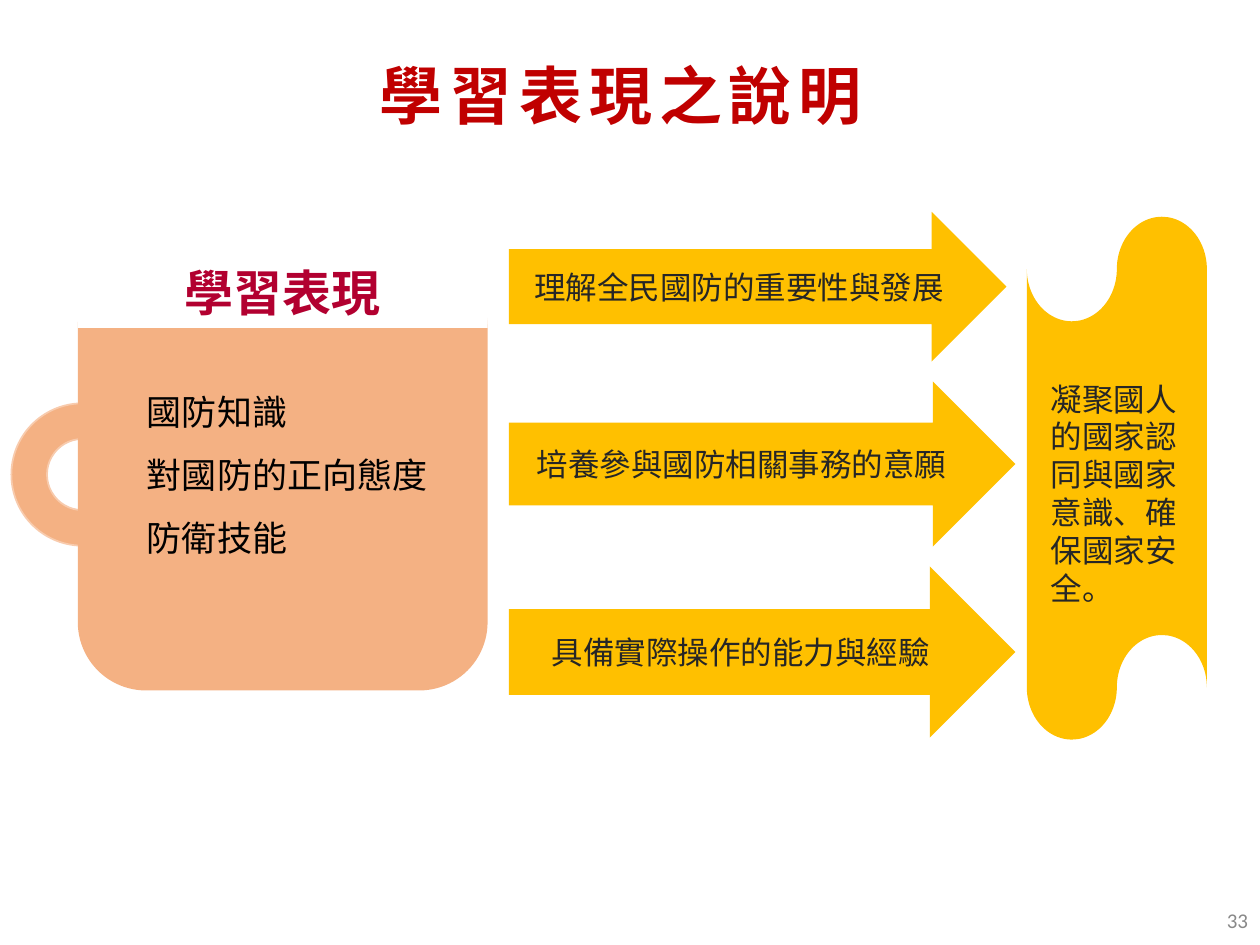
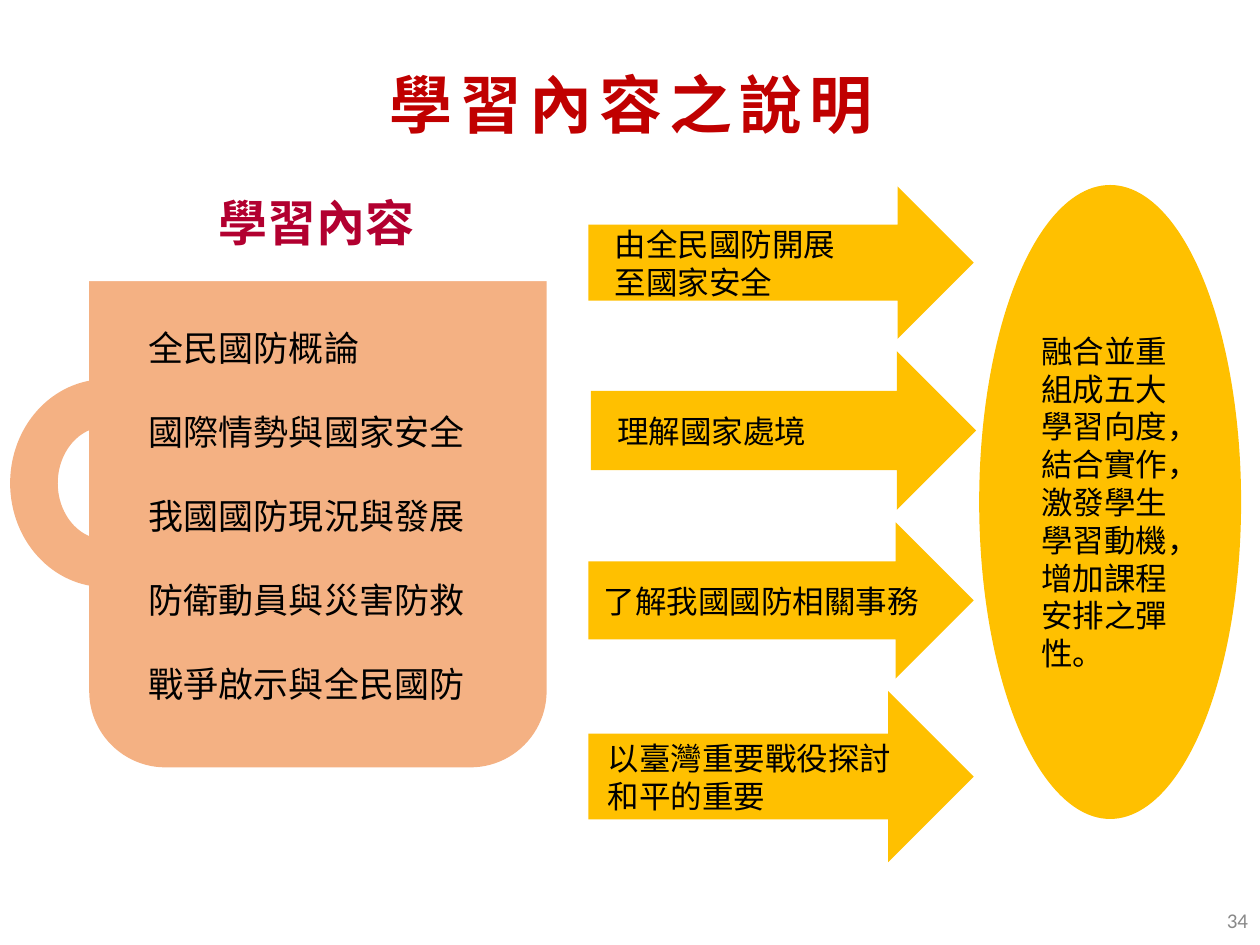
from pptx import Presentation
from pptx.dml.color import RGBColor
from pptx.enum.shapes import MSO_SHAPE
from pptx.enum.text import MSO_ANCHOR, PP_ALIGN
from pptx.oxml.ns import qn
from pptx.util import Cm, Pt

RIGHT_ARROW = MSO_SHAPE.RIGHT_ARROW
BLOCK_ARC = MSO_SHAPE.BLOCK_ARC
ROUNDED = MSO_SHAPE.ROUNDED_RECTANGLE
RECTANGLE = MSO_SHAPE.RECTANGLE
TAPE = MSO_SHAPE.WAVE if not hasattr(MSO_SHAPE, "FLOWCHART_PUNCHED_TAPE") else MSO_SHAPE.FLOWCHART_PUNCHED_TAPE
OVAL = MSO_SHAPE.OVAL
LEFT, CENTER, RIGHT = PP_ALIGN.LEFT, PP_ALIGN.CENTER, PP_ALIGN.RIGHT
TOP, MIDDLE = MSO_ANCHOR.TOP, MSO_ANCHOR.MIDDLE

CJK_FONT = "Noto Sans CJK SC"
NUMBER_FONT = "Calibri"
TITLE_RED = "C00000"
LABEL_RED = "B20030"
GOLD = "FFC000"
PEACH = "F4B183"
PALE_PEACH = "F8CBAD"
WHITE = "FFFFFF"
BLACK = "000000"
CHARCOAL = "262626"
GREY = "898989"
INSET = 0.25


def color(hex_code):
    return RGBColor.from_string(hex_code)


def write(box, text, size=18, ink=BLACK, font=CJK_FONT, bold=False, align=LEFT,
          anchor=MIDDLE, indent=0, drop=0, gap=0, tracking=0, line_spacing=None):
    """Fill a box with one paragraph per line; indent and drop (cm) widen its insets."""
    frame = box.text_frame
    frame.word_wrap = True
    frame.vertical_anchor = anchor
    frame.margin_left = Cm(INSET + indent)
    frame.margin_right = Cm(INSET)
    frame.margin_top = Cm(INSET / 2 + drop)
    frame.margin_bottom = Cm(INSET / 2)
    for number, line in enumerate(text.split("\n")):
        para = frame.add_paragraph() if number else frame.paragraphs[0]
        para.alignment = align
        if number:
            para.space_before = Pt(gap)
        if line_spacing:
            para.line_spacing = line_spacing
        span = para.add_run()
        span.text = line
        span.font.size = Pt(size)
        span.font.bold = bold
        span.font.color.rgb = color(ink)
        span.font.name = font
        properties = span.font._element
        latin = properties.find(qn("a:latin"))
        east_asian = latin.makeelement(qn("a:ea"), {"typeface": font})
        latin.addnext(east_asian)
        if tracking:
            properties.set("spc", str(tracking * 100))


def add_text(page, area, text, **style):
    box = page.shapes.add_textbox(*map(Cm, area))
    write(box, text, **style)


def add_figure(page, kind, area, fill, outline=None):
    figure = page.shapes.add_shape(kind, *map(Cm, area))
    figure.shadow.inherit = False
    figure.fill.solid()
    figure.fill.fore_color.rgb = color(fill)
    if outline:
        figure.line.color.rgb = color(outline)
        figure.line.width = Pt(1)
    else:
        figure.line.fill.background()
    return figure


def add_page(deck, title, title_area, number):
    page = deck.slides.add_slide(deck.slide_layouts[6])
    add_text(page, title_area, title, size=36, ink=TITLE_RED, bold=True,
             align=CENTER, tracking=4, line_spacing=0.9)
    add_text(page, (19.69, 18.03, 5.72, 1.02), number, size=12, ink=GREY,
             font=NUMBER_FONT, align=RIGHT)
    return page


def add_mug(page, label, label_area, topics, body_area, handle_area,
            handle_line=None, **style):
    """Draw a mug of topics, its rim hidden by the white label."""
    handle = add_figure(page, BLOCK_ARC, handle_area, PEACH, handle_line)
    handle.rotation = 270
    body = add_figure(page, ROUNDED, body_area, PEACH)
    write(body, topics, size=20, **style)
    rim = add_figure(page, RECTANGLE, label_area, WHITE)
    write(rim, label, size=28, ink=LABEL_RED, bold=True, align=CENTER, anchor=TOP)


def add_arrows(page, top, gap, rows, ink):
    """Stack arrows downwards; each row is left, width, height, text and style."""
    for left, width, height, text, style in rows:
        arrow = add_figure(page, RIGHT_ARROW, (left, top, width, height), GOLD)
        write(arrow, text, ink=ink, **style)
        top += height + gap


def add_goal(page, kind, area, text, **style):
    goal = add_figure(page, kind, area, GOLD)
    write(goal, text, indent=0.23, **style)


def add_performance_page(deck):
    page = add_page(deck, "學習表現之說明", (1.57, 0, 21.89, 3.99), "33")
    centered = {"align": CENTER}
    add_arrows(page, 4.27, 0.4, [
        (10.26, 10.03, 3.02, "理解全民國防的重要性與發展", centered),
        (10.26, 10.21, 3.33, "培養參與國防相關事務的意願", centered),
        (10.26, 10.21, 3.45, "具備實際操作的能力與經驗", centered),
    ], CHARCOAL)
    add_goal(page, TAPE, (20.7, 4.37, 3.63, 10.54),
             "凝聚國人的國家認同與國家意識、確保國家安全。", ink=CHARCOAL, drop=0.6)
    add_mug(page, "學習表現", (1.57, 5.16, 8.26, 1.45),
            "國防知識\n對國防的正向態度\n防衛技能", (1.57, 5.21, 8.26, 8.71),
            (0.23, 8.13, 2.87, 2.87), handle_line=PALE_PEACH, indent=0.74, gap=12)


def add_content_page(deck):
    page = add_page(deck, "學習內容之說明", (1.42, 0.88, 22.61, 2.59), "34")
    add_arrows(page, 3.76, 0.25, [
        (11.86, 7.77, 3.07, "由全民國防開展\n至國家安全", {"indent": 0.28}),
        (11.91, 7.77, 3.2, "理解國家處境", {"indent": 0.28}),
        (11.86, 7.77, 3.15, "了解我國國防相關事務", {"align": CENTER}),
        (11.86, 7.77, 3.45, "以臺灣重要戰役探討\n和平的重要", {"indent": 0.14}),
    ], BLACK)
    add_goal(page, OVAL, (19.74, 3.73, 5.28, 12.78),
             "融合並重組成五大學習向度，結合實作，激發學生學習動機，增加課程安排之彈性。")
    topics = "\n".join([
        "全民國防概論", "國際情勢與國家安全", "我國國防現況與發展",
        "防衛動員與災害防救", "戰爭啟示與全民國防",
    ])
    add_mug(page, "學習內容", (1.73, 3.76, 9.3, 1.91), topics,
            (1.8, 4.01, 9.22, 11.46), (0.03, 7.82, 4.19, 3.84),
            indent=0.5, drop=1.32, gap=24)


def main():
    deck = Presentation()
    deck.slide_width, deck.slide_height = Cm(25.4), Cm(19.05)
    add_performance_page(deck)
    add_content_page(deck)
    deck.save("out.pptx")


if __name__ == "__main__":
    main()
